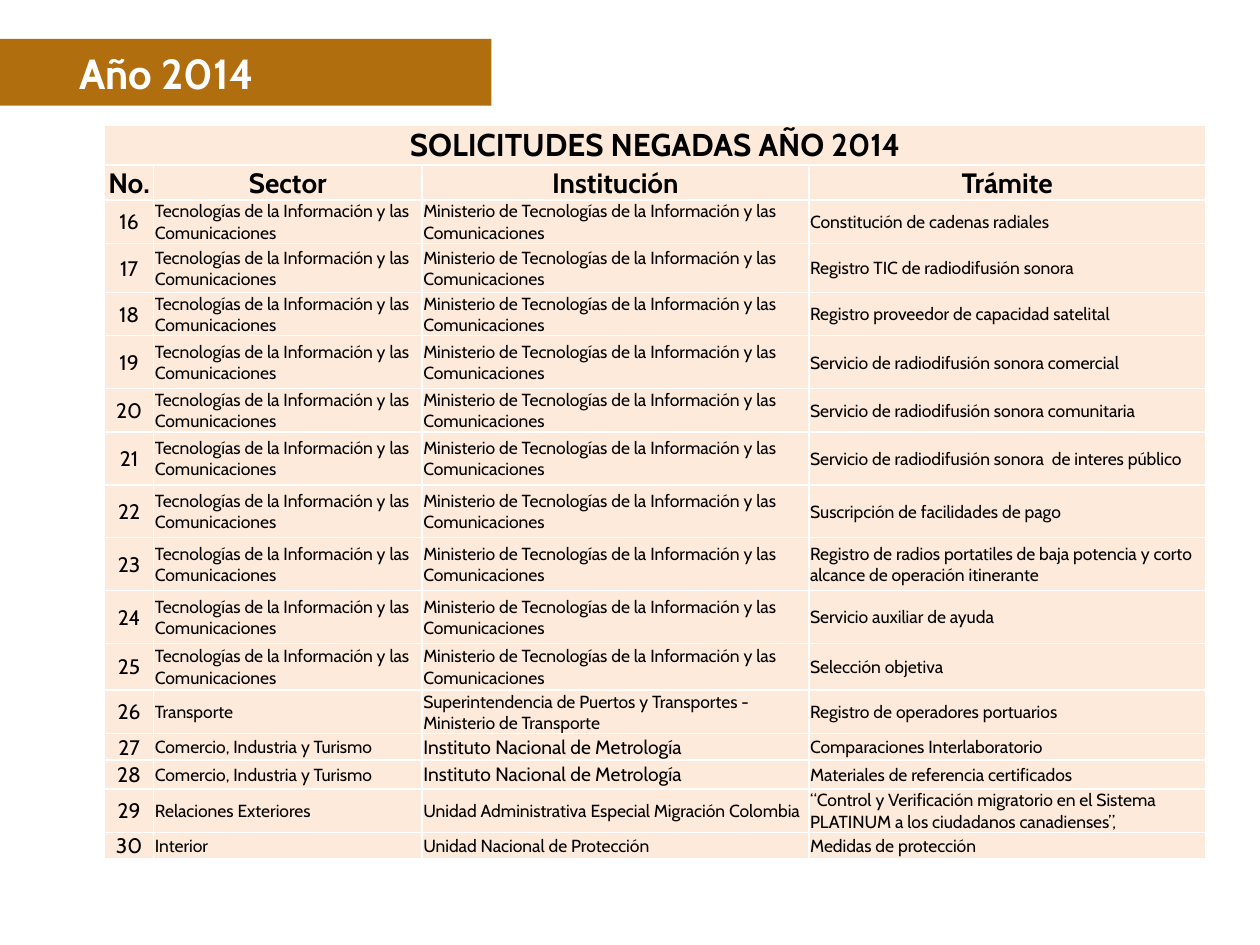
from dataclasses import dataclass

from lxml import etree
from pptx import Presentation
from pptx import util as u
from pptx.dml.color import RGBColor
from pptx.enum import shapes, text
from pptx.oxml import ns


@dataclass(frozen=True)
class Theme:
    font: str = "Cabin"
    band: str = "B06E0E"
    cell: str = "FDEADA"
    ink: str = "000000"
    white: str = "FFFFFF"
    heading: int = 24
    table_title: int = 18
    table_head: int = 16
    number: int = 12
    large_body: int = 11
    body: int = 10


TIC = "Tecnologías de la Información y las Comunicaciones"
MINTIC = "Ministerio de " + TIC
COMERCIO = "Comercio, Industria y Turismo"
METROLOGIA = "Instituto Nacional de Metrología"
TABLE_TITLE = "SOLICITUDES NEGADAS AÑO 2014"
HEADERS = ["No.", "Sector", "Institución", "Trámite"]
FIRST_NUMBER = 16
TIC_PROCEDURES = [
    "Constitución de cadenas radiales",
    "Registro TIC de radiodifusión sonora",
    "Registro proveedor de capacidad satelital",
    "Servicio de radiodifusión sonora comercial",
    "Servicio de radiodifusión sonora comunitaria",
    "Servicio de radiodifusión sonora  de interes público",
    "Suscripción de facilidades de pago",
    "Registro de radios portatiles de baja potencia y corto alcance de operación itinerante",
    "Servicio auxiliar de ayuda",
    "Selección objetiva",
]
REQUESTS = [(TIC, MINTIC, procedure) for procedure in TIC_PROCEDURES] + [
    ("Transporte", "Superintendencia de Puertos y Transportes - Ministerio de Transporte",
     "Registro de operadores portuarios"),
    (COMERCIO, METROLOGIA, "Comparaciones Interlaboratorio"),
    (COMERCIO, METROLOGIA, "Materiales de referencia certificados"),
    ("Relaciones Exteriores", "Unidad Administrativa Especial Migración Colombia",
     "“Control y Verificación migratorio en el Sistema PLATINUM a los ciudadanos canadienses”,"),
    ("Interior", "Unidad Nacional de Protección", "Medidas de protección"),
]
COL_WIDTHS = [0.39, 2.13, 3.07, 3.15]
ROW_HEIGHTS = [0.32, 0.26, 0.34, 0.39, 0.29, 0.42, 0.32, 0.42, 0.42,
               0.42, 0.42, 0.37, 0.31, 0.21, 0.23, 0.24, 0.13]


def set_all(target, values):
    for name, value in values.items():
        setattr(target, name, value)


def box(*lengths):
    return [u.Inches(length) for length in lengths]


class SlideBuilder:
    def __init__(self, slide, theme):
        self.slide = slide
        self.theme = theme

    def fill(self, target, color):
        target.fill.solid()
        target.fill.fore_color.rgb = RGBColor.from_string(color)

    def add_text(self, tf, words, size, color, bold=False, align=text.PP_ALIGN.LEFT):
        p = tf.paragraphs[0]
        p.alignment = align
        r = p.add_run()
        r.text = words
        set_all(r.font, {"name": self.theme.font, "size": u.Pt(size), "bold": bold})
        r.font.color.rgb = RGBColor.from_string(color)

    def heading(self, words):
        group = self.slide.shapes.add_group_shape()
        band = group.shapes.add_shape(shapes.MSO_SHAPE.RECTANGLE, *box(-0.07, 0.31, 3.97, 0.53))
        band.shadow.inherit = False
        self.fill(band, self.theme.band)
        band.line.fill.background()
        sp = group.shapes.add_textbox(*box(0.53, 0.33, 3.78, 0.5))
        set_all(sp.text_frame, {"word_wrap": True,
                                "auto_size": text.MSO_AUTO_SIZE.SHAPE_TO_FIT_TEXT})
        self.add_text(sp.text_frame, words, self.theme.heading, self.theme.white, bold=True)

    def borders(self, cell):
        """Put a 1 pt white line on the four sides of a cell."""
        tc_pr = cell._tc.get_or_add_tcPr()
        for i, side in enumerate(("lnL", "lnR", "lnT", "lnB")):
            line = etree.Element(ns.qn(f"a:{side}"), w=str(u.Pt(1)))
            solid = etree.SubElement(line, ns.qn("a:solidFill"))
            etree.SubElement(solid, ns.qn("a:srgbClr"), val=self.theme.white)
            tc_pr.insert(i, line)

    def cell(self, cell, words, size, bold=False, align=text.PP_ALIGN.LEFT):
        edge = u.Inches(0.01)
        set_all(cell, {"margin_left": edge, "margin_right": edge, "margin_top": edge,
                       "margin_bottom": 0, "vertical_anchor": text.MSO_ANCHOR.MIDDLE})
        self.fill(cell, self.theme.cell)
        self.borders(cell)
        if words:
            self.add_text(cell.text_frame, words, size, self.theme.ink, bold, align)

    def table(self, title, headers, requests, first_number):
        theme, center = self.theme, text.PP_ALIGN.CENTER
        table = self.slide.shapes.add_table(
            len(requests) + 2, len(headers),
            *box(0.83, 0.99, sum(COL_WIDTHS), sum(ROW_HEIGHTS))).table
        set_all(table, {"first_row": False, "horz_banding": False})
        for column, width in zip(table.columns, COL_WIDTHS):
            column.width = u.Inches(width)
        for row, height in zip(table.rows, ROW_HEIGHTS):
            row.height = u.Inches(height)

        for c, header in enumerate(headers):
            self.cell(table.cell(0, c), "" if c else title, theme.table_title, True, center)
            self.cell(table.cell(1, c), header, theme.table_head, True, center)
        table.cell(0, 0).merge(table.cell(0, len(headers) - 1))

        for i, request in enumerate(requests):
            self.cell(table.cell(i + 2, 0), str(first_number + i), theme.number, align=center)
            for c, words in enumerate(request, 1):
                size = theme.large_body if words == METROLOGIA else theme.body
                self.cell(table.cell(i + 2, c), words, size)


def main():
    prs = Presentation()
    set_all(prs, {"slide_width": u.Inches(10), "slide_height": u.Inches(7.5)})
    s = prs.slides.add_slide(prs.slide_layouts[6])
    builder = SlideBuilder(s, Theme())
    builder.heading("Año 2014")
    builder.table(TABLE_TITLE, HEADERS, REQUESTS, FIRST_NUMBER)
    prs.save("out.pptx")


if __name__ == "__main__":
    main()
